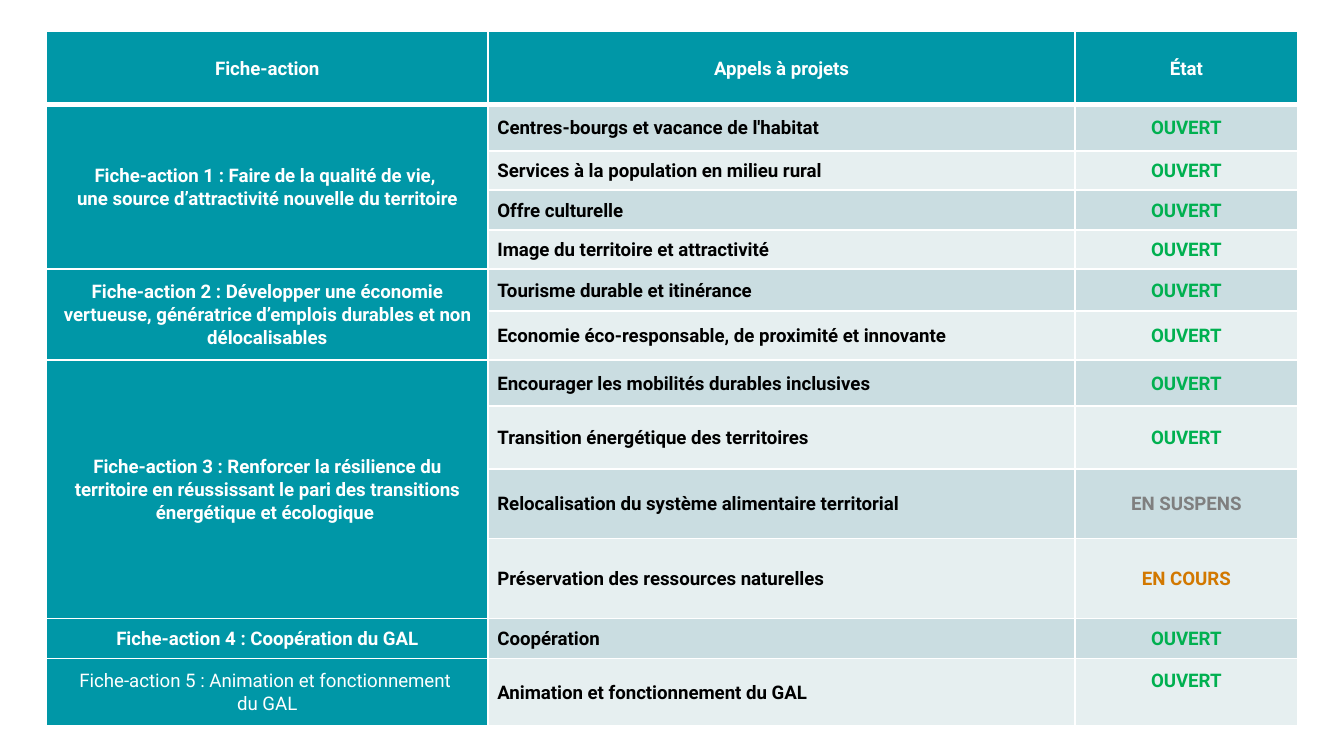
from lxml.etree import SubElement
from pptx import Presentation
from pptx.dml.color import RGBColor
from pptx.enum.text import MSO_ANCHOR, PP_ALIGN
from pptx.oxml.ns import qn
from pptx.util import Cm, Pt

COLORS = {
    "teal": "0097A7", "dark band": "CADDE1", "light band": "E6EFF0",
    "white": "FFFFFF", "black": "000000",
}
STATE_COLORS = {"OUVERT": "00B050", "EN SUSPENS": "7F7F7F", "EN COURS": "D27800"}
FONT = "Roboto"

HEADERS = ["Fiche-action", "Appels à projets", "État"]
ACTIONS = [
    ("Fiche-action 1 : Faire de la qualité de vie, \n"
     "une source d’attractivité nouvelle du territoire", [
         ("Centres-bourgs et vacance de l'habitat", "OUVERT"),
         ("Services à la population en milieu rural", "OUVERT"),
         ("Offre culturelle ", "OUVERT"),
         ("Image du territoire et attractivité ", "OUVERT"),
     ]),
    ("Fiche-action 2 : Développer une économie vertueuse, "
     "génératrice d’emplois durables et non délocalisables", [
         ("Tourisme durable et itinérance", "OUVERT"),
         ("Economie éco-responsable, de proximité et innovante", "OUVERT"),
     ]),
    ("Fiche-action 3 : Renforcer la résilience du territoire en réussissant "
     "le pari des transitions énergétique et écologique ", [
         ("Encourager les mobilités durables inclusives", "OUVERT"),
         ("Transition énergétique des territoires", "OUVERT"),
         ("Relocalisation du système alimentaire territorial ", "EN SUSPENS"),
         ("Préservation des ressources naturelles", "EN COURS"),
     ]),
    ("Fiche-action 4 : Coopération du GAL", [("Coopération", "OUVERT")]),
    ("Fiche-action 5 : Animation et fonctionnement \ndu GAL", [
        ("Animation et fonctionnement du GAL", "OUVERT"),
    ]),
]
COLUMN_WIDTHS = [8.34, 11.1, 4.2]
ROW_HEIGHTS = [1.39, 0.87, 0.74, 0.76, 0.73, 0.8, 0.92,
               0.87, 1.19, 1.31, 1.51, 0.76, 1.27]


def draw_borders(cell, top=1, bottom=1):
    """Give the cell white edges; widths are in points."""
    properties = cell._tc.get_or_add_tcPr()
    for edge, width in (("L", 1), ("R", 1), ("T", top), ("B", bottom)):
        line = SubElement(properties, qn(f"a:ln{edge}"), w=str(Pt(width)))
        fill = SubElement(line, qn("a:solidFill"))
        SubElement(fill, qn("a:srgbClr"), val=COLORS["white"])


def paint(cell, fill, top=1, bottom=1):
    draw_borders(cell, top, bottom)
    cell.fill.solid()
    cell.fill.fore_color.rgb = RGBColor.from_string(fill)


def write(cell, text, color=COLORS["white"], align=PP_ALIGN.CENTER, bold=True):
    cell.vertical_anchor = MSO_ANCHOR.MIDDLE
    cell.margin_left = cell.margin_right = Cm(0.18)
    cell.margin_top = cell.margin_bottom = 0
    cell.text = text
    for para in cell.text_frame.paragraphs:
        para.alignment = align
        para.line_spacing = 1.07
        for span in para.runs:
            span.font.name = FONT
            span.font.size = Pt(10)
            span.font.bold = bold
            span.font.color.rgb = RGBColor.from_string(color)


def main():
    deck = Presentation()
    deck.slide_width, deck.slide_height = Cm(25.4), Cm(14.28)
    page = deck.slides.add_slide(deck.slide_layouts[6])
    table = page.shapes.add_table(
        len(ROW_HEIGHTS), len(COLUMN_WIDTHS), Cm(0.88), Cm(0.59),
        Cm(sum(COLUMN_WIDTHS)), Cm(sum(ROW_HEIGHTS))).table
    for column, width in zip(table.columns, COLUMN_WIDTHS):
        column.width = Cm(width)
    for table_row, height in zip(table.rows, ROW_HEIGHTS):
        table_row.height = Cm(height)

    for column, header in enumerate(HEADERS):
        paint(table.cell(0, column), COLORS["teal"], bottom=3)
        write(table.cell(0, column), header)

    row = 1
    for action, calls in ACTIONS:
        first = table.cell(row, 0)
        last_row = row + len(calls) - 1
        if len(calls) > 1:
            first.merge(table.cell(last_row, 0))
        write(first, action, bold=last_row < len(ROW_HEIGHTS) - 1)
        for call, state in calls:
            band = COLORS["dark band" if row % 2 else "light band"]
            for column, fill in enumerate((COLORS["teal"], band, band)):
                paint(table.cell(row, column), fill, top=3 if row == 1 else 1)
            write(table.cell(row, 1), call, color=COLORS["black"], align=PP_ALIGN.LEFT)
            write(table.cell(row, 2), state, color=STATE_COLORS[state])
            row += 1

    # The last state sits above the middle of its row.
    table.cell(row - 1, 2).margin_bottom = Cm(0.45)
    deck.save("out.pptx")


if __name__ == "__main__":
    main()
